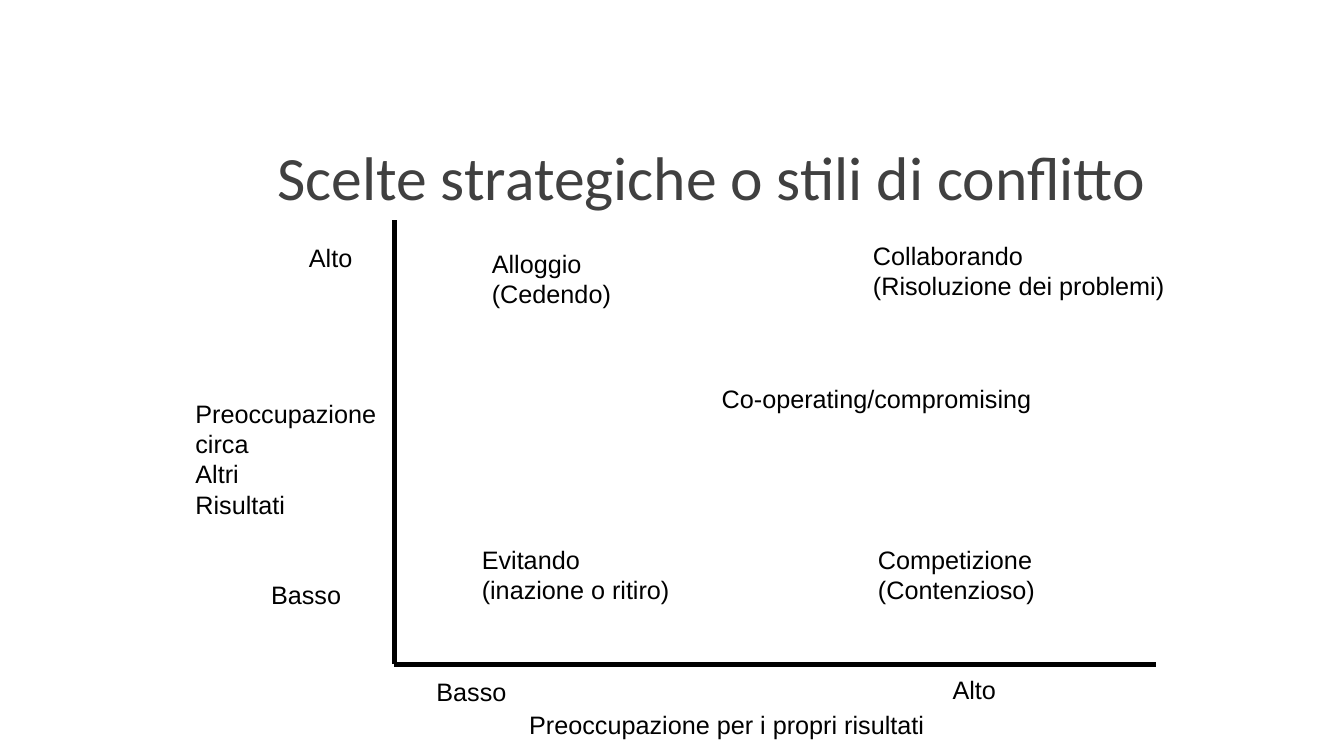
from lxml.etree import SubElement
from pptx import Presentation
from pptx.dml.color import RGBColor
from pptx.enum.shapes import MSO_CONNECTOR
from pptx.enum.text import MSO_ANCHOR, MSO_AUTO_SIZE, PP_ALIGN
from pptx.oxml.ns import qn
from pptx.util import Inches, Pt

BLACK = RGBColor(0, 0, 0)
DARK_GRAY = RGBColor(0x40, 0x40, 0x40)

LABEL_FONT = {"name": "Arial", "size": Pt(18)}
TITLE_FONT = {"name": "Calibri", "size": Pt(44)}
TITLE = "Scelte strategiche o stili di conflitto"

ORIGIN = (3.91, 6.59)
AXIS_TOP = (3.91, 2.18)
AXIS_RIGHT = (11.47, 6.59)

AXIS_LABELS = [
    ("Preoccupazione\ncirca\nAltri\nRisultati", 1.84, 3.9, 2, 1.31, PP_ALIGN.LEFT),
    ("Preoccupazione per i propri risultati", 5.15, 6.99, 4.54, 0.4, PP_ALIGN.LEFT),
    ("Basso", 4.23, 6.66, 1.04, 0.4, PP_ALIGN.LEFT),
    ("Alto", 9.35, 6.64, 1.04, 0.4, PP_ALIGN.LEFT),
    ("Alto", 2.66, 2.35, 1.24, 0.4, PP_ALIGN.CENTER),
    ("Basso", 2.59, 5.7, 0.94, 0.4, PP_ALIGN.LEFT),
]

CONFLICT_STYLES = [
    ("Evitando\n(inazione o ritiro)", 4.68, 5.35, 2.08, 0.71),
    ("Competizione\n(Contenzioso)", 8.61, 5.35, 1.77, 0.71),
    ("Alloggio\n(Cedendo)", 4.78, 2.41, 1.39, 0.71),
    ("Collaborando\n(Risoluzione dei problemi)", 8.56, 2.33, 3.12, 0.71),
    ("Co-operating/compromising", 7.06, 3.75, 3.27, 0.4),
]


class SlideBuilder:
    """Draw styled text and axes on the current slide."""

    def __init__(self, slide):
        self.slide = slide
        self.frame_format = {"auto_size": MSO_AUTO_SIZE.SHAPE_TO_FIT_TEXT}
        self.axis_width = Pt(3.5)

    def add_text(self, text, box, font, color=BLACK, paragraph_format=None, **frame_format):
        shape = self.slide.shapes.add_textbox(*map(Inches, box))
        frame = shape.text_frame
        paragraph = frame.paragraphs[0]
        paragraph.text = text
        for target, values in (
            (frame, {**self.frame_format, **frame_format}),
            (paragraph, paragraph_format or {}),
            (paragraph.font, font),
        ):
            for name, value in values.items():
                setattr(target, name, value)
        paragraph.font.color.rgb = color

    def add_axis(self, start, end):
        axis = self.slide.shapes.add_connector(
            MSO_CONNECTOR.STRAIGHT, *map(Inches, start + end)
        )
        axis.line.color.rgb = BLACK
        axis.line.width = self.axis_width
        SubElement(axis._element.spPr, qn("a:effectLst"))


def main():
    presentation = Presentation()
    presentation.slide_width = Inches(13.33)
    presentation.slide_height = Inches(7.5)
    builder = SlideBuilder(presentation.slides.add_slide(presentation.slide_layouts[6]))

    builder.add_text(
        TITLE, (1.31, 1.07, 11.5, 1.45), TITLE_FONT, DARK_GRAY,
        {"alignment": PP_ALIGN.CENTER, "line_spacing": 0.9},
        word_wrap=True, auto_size=MSO_AUTO_SIZE.NONE, vertical_anchor=MSO_ANCHOR.MIDDLE,
    )
    for end in (AXIS_TOP, AXIS_RIGHT):
        builder.add_axis(ORIGIN, end)
    for text, *box, alignment in AXIS_LABELS:
        builder.add_text(
            text, box, LABEL_FONT, paragraph_format={"alignment": alignment}, word_wrap=True
        )
    for text, *box in CONFLICT_STYLES:
        builder.add_text(text, box, LABEL_FONT, word_wrap=False)

    presentation.save("out.pptx")


if __name__ == "__main__":
    main()
